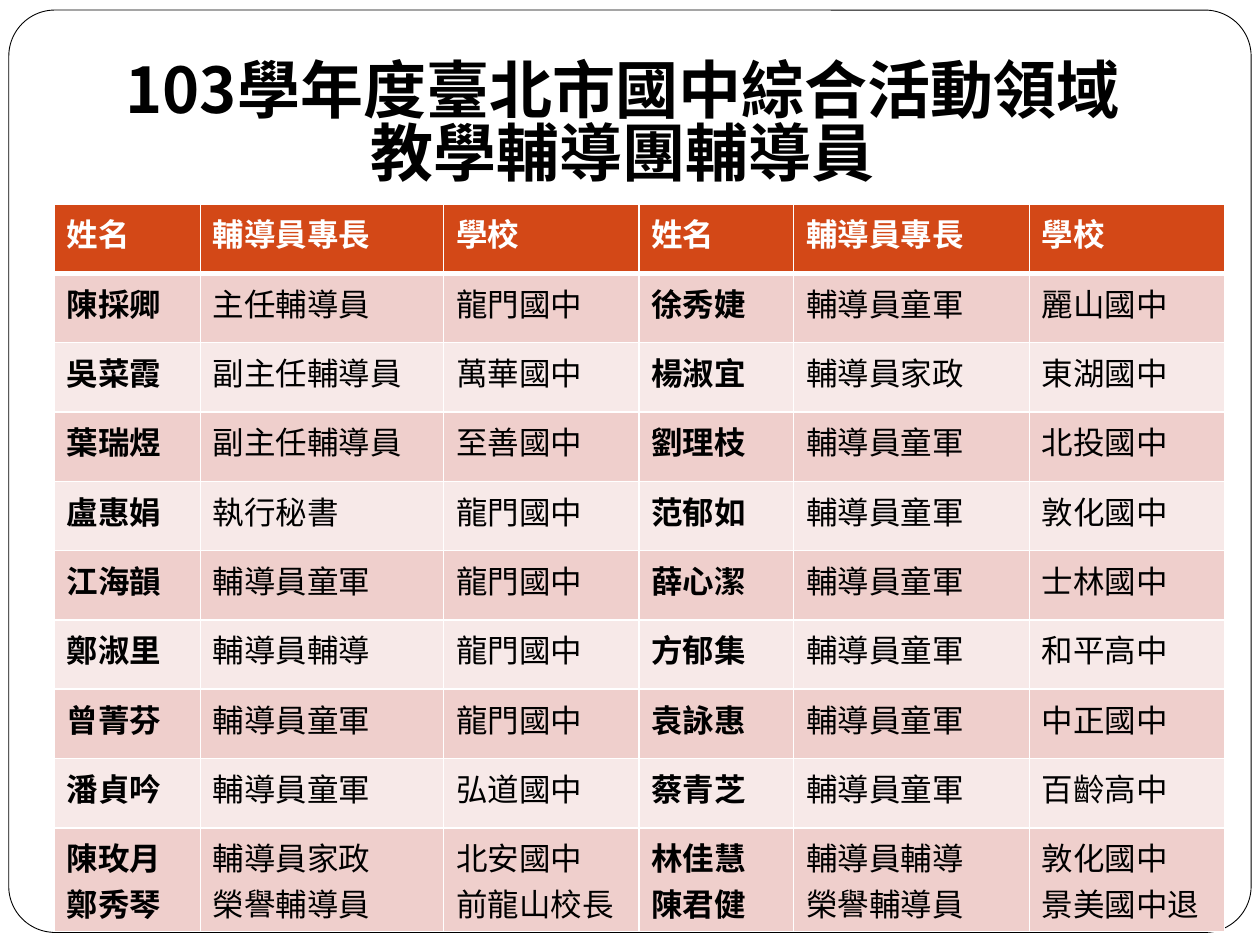
from lxml import etree
from pptx import Presentation
from pptx.dml.color import RGBColor
from pptx.enum.shapes import MSO_SHAPE
from pptx.enum.text import MSO_ANCHOR, PP_ALIGN
from pptx.oxml.ns import qn
from pptx.util import Inches, Pt

TITLE = "103學年度臺北市國中綜合活動領域\v教學輔導團輔導員"
HEADER = ("姓名", "輔導員專長", "學校") * 2
ADVISORS = [
    ("陳採卿", "主任輔導員", "龍門國中", "徐秀婕", "輔導員童軍", "麗山國中"),
    ("吳菜霞", "副主任輔導員", "萬華國中", "楊淑宜", "輔導員家政", "東湖國中"),
    ("葉瑞煜", "副主任輔導員", "至善國中", "劉理枝", "輔導員童軍", "北投國中"),
    ("盧惠娟", "執行秘書", "龍門國中", "范郁如", "輔導員童軍", "敦化國中"),
    ("江海韻", "輔導員童軍", "龍門國中", "薛心潔", "輔導員童軍", "士林國中"),
    ("鄭淑里", "輔導員輔導", "龍門國中", "方郁集", "輔導員童軍", "和平高中"),
    ("曾菁芬", "輔導員童軍", "龍門國中", "袁詠惠", "輔導員童軍", "中正國中"),
    ("潘貞吟", "輔導員童軍", "弘道國中", "蔡青芝", "輔導員童軍", "百齡高中"),
    ("陳玫月\n鄭秀琴", "輔導員家政\n榮譽輔導員", "北安國中\n前龍山校長",
     "林佳慧\n陳君健", "輔導員輔導\n榮譽輔導員", "敦化國中\n景美國中退"),
]
COL_WIDTHS = (1.16, 1.93, 1.55, 1.23, 1.87, 1.55)
ROW_HEIGHT, LAST_ROW_HEIGHT = 0.55, 0.73
NAME_COLS = (0, 3)
CJK_FONT, LATIN_FONT = "Noto Sans CJK SC", "Times New Roman"
COLORS = {"black": "000000", "white": "FFFFFF", "header": "D34817",
          "odd": "EFCFCC", "even": "F7E9E8"}


def rgb(name):
    return RGBColor.from_string(COLORS[name])


def write(tf, text, size=18, font=LATIN_FONT, color="black", bold=False,
          align=PP_ALIGN.LEFT, spacing=None):
    """Fill a text frame; newlines start paragraphs, vertical tabs break lines."""
    tf.text = text
    for p in tf.paragraphs:
        p.alignment = align
        p.line_spacing = spacing
        for r in p.runs:
            r.font.size, r.font.bold, r.font.name = Pt(size), bold, font
            r.font.color.rgb = rgb(color)
            ea = etree.SubElement(r.font._element, qn("a:ea"))
            ea.set("typeface", CJK_FONT)


def set_borders(cell, **widths):
    """Draw white cell edges; widths in points are keyed L, R, T, B."""
    tc_pr = cell._tc.get_or_add_tcPr()
    for i, side in enumerate("LRTB"):
        ln = etree.Element(qn(f"a:ln{side}"), w=str(Pt(widths.get(side, 1))))
        fill = etree.SubElement(ln, qn("a:solidFill"))
        etree.SubElement(fill, qn("a:srgbClr"), val=COLORS["white"])
        tc_pr.insert(i, ln)


def add_frame(slide):
    frame = slide.shapes.add_shape(MSO_SHAPE.ROUNDED_RECTANGLE, Inches(0.07),
                                   Inches(0.08), Inches(9.86), Inches(7.32))
    frame.adjustments[0] = 0.05
    frame.shadow.inherit = False
    frame.fill.solid()
    frame.fill.fore_color.rgb = rgb("white")
    frame.line.color.rgb = rgb("black")
    frame.line.width = Pt(0.5)
    slide.shapes._spTree.insert(2, frame._element)  # behind the title


def add_title(slide):
    title = slide.shapes.title
    title.left, title.top = Inches(0.83), Inches(0.29)
    title.width, title.height = Inches(8.22), Inches(1.31)
    tf = title.text_frame
    tf.word_wrap = True
    tf.vertical_anchor = MSO_ANCHOR.BOTTOM
    tf.margin_left = tf.margin_right = tf.margin_bottom = Inches(0.1)
    tf.margin_top = Inches(0.05)
    write(tf, TITLE, size=36, font=CJK_FONT, bold=True,
          align=PP_ALIGN.CENTER, spacing=0.83)


def add_advisor_table(slide):
    rows = [HEADER] + ADVISORS
    heights = [ROW_HEIGHT] * len(ADVISORS) + [LAST_ROW_HEIGHT]
    table = slide.shapes.add_table(
        len(rows), len(HEADER), Inches(0.43), Inches(1.62),
        Inches(sum(COL_WIDTHS)), Inches(sum(heights))).table
    for col, width in zip(table.columns, COL_WIDTHS):
        col.width = Inches(width)
    for i, (values, height) in enumerate(zip(rows, heights)):
        table.rows[i].height = Inches(height)
        fill = "header" if i == 0 else "odd" if i % 2 else "even"
        for j, value in enumerate(values):
            cell = table.cell(i, j)
            cell.fill.solid()
            cell.fill.fore_color.rgb = rgb(fill)
            set_borders(cell, T=3 if i == 1 else 1, B=3 if i == 0 else 1)
            write(cell.text_frame, value, bold=i == 0 or j in NAME_COLS,
                  color="white" if i == 0 else "black")


def main():
    prs = Presentation()
    prs.slide_width, prs.slide_height = Inches(10), Inches(7.5)
    slide = prs.slides.add_slide(prs.slide_layouts[5])
    add_frame(slide)
    add_title(slide)
    add_advisor_table(slide)
    prs.save("out.pptx")


if __name__ == "__main__":
    main()
